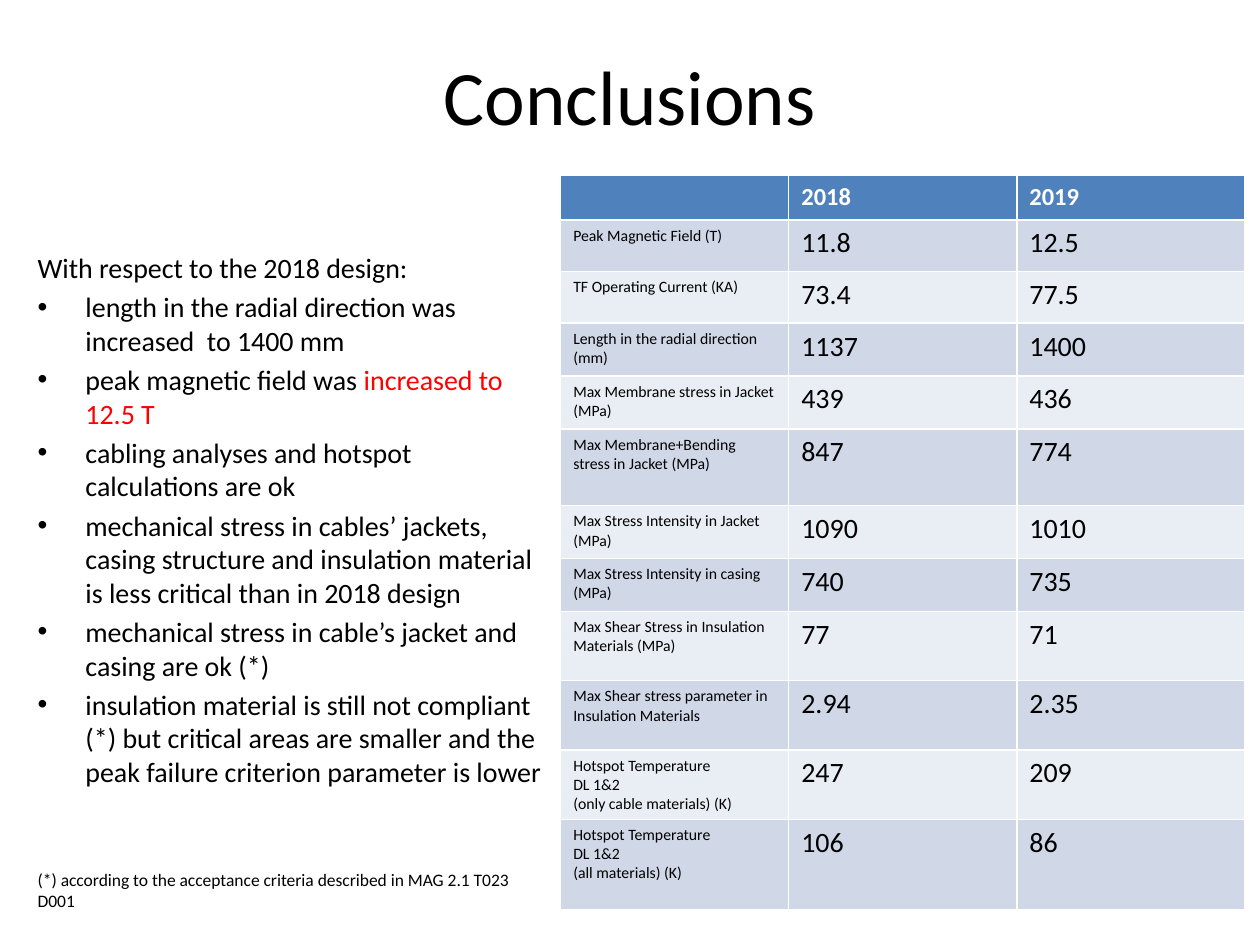
from lxml.etree import SubElement
from pptx import Presentation
from pptx.dml.color import RGBColor
from pptx.enum.text import MSO_ANCHOR, PP_ALIGN
from pptx.oxml.ns import qn
from pptx.util import Inches, Pt

WIDE, HIGH = Inches(10), Inches(7.5)
FONT = "Calibri"
HUES = {"ink": "000000", "alert": "FF0000", "head": "4F81BD",
        "odd": "D0D8E8", "even": "E9EDF4", "paper": "FFFFFF"}

INTRO = "With respect to the 2018 design:"
POINTS = [
    ("length in the radial direction was increased  to 1400 mm", ""),
    ("peak magnetic field was ", "increased to 12.5 T"),
    ("cabling analyses and hotspot calculations are ok", ""),
    ("mechanical stress in cables’ jackets, casing structure and insulation "
     "material is less critical than in 2018 design", ""),
    ("mechanical stress in cable’s jacket and casing are ok (*)", ""),
    ("insulation material is still not compliant (*) but critical areas are "
     "smaller and the peak failure criterion parameter is lower", ""),
]
NOTE = "(*) according to the acceptance criteria described in MAG 2.1 T023 D001"

ROWS = [
    (0.35, "", "2018", "2019"),
    (0.41, "Peak Magnetic Field (T)", "11.8", "12.5"),
    (0.41, "TF Operating Current (KA)", "73.4", "77.5"),
    (0.42, "Length in the radial direction (mm)", "1137", "1400"),
    (0.42, "Max Membrane stress in Jacket (MPa)", "439", "436"),
    (0.61, "Max Membrane+Bending\nstress in Jacket (MPa)", "847", "774"),
    (0.42, "Max Stress Intensity in Jacket (MPa)", "1090", "1010"),
    (0.42, "Max Stress Intensity in casing (MPa)", "740", "735"),
    (0.55, "Max Shear Stress in Insulation Materials (MPa)", "77", "71"),
    (0.55, "Max Shear stress parameter in Insulation Materials", "2.94", "2.35"),
    (0.55, "Hotspot Temperature\nDL 1&2\n(only cable materials) (K)", "247", "209"),
    (0.72, "Hotspot Temperature\nDL 1&2\n(all materials) (K)", "106", "86"),
]


def share(left, top, width, height):
    """Turn percentages of the slide into a box."""
    return (int(WIDE * left / 100), int(HIGH * top / 100),
            int(WIDE * width / 100), int(HIGH * height / 100))


def style(run, size, hue="ink", bold=False):
    """Format one run."""
    font = run.font
    font.name, font.size, font.bold = FONT, Pt(size), bold
    font.color.rgb = RGBColor.from_string(HUES[hue])


def add_title(slide, box):
    """Place the heading in its placeholder."""
    title = slide.shapes.title
    title.left, title.top, title.width, title.height = box
    frame = title.text_frame
    frame.text = "Conclusions"
    frame.vertical_anchor = MSO_ANCHOR.MIDDLE
    para = frame.paragraphs[0]
    para.alignment = PP_ALIGN.CENTER
    style(para.runs[0], 44)


def add_line(para, text, alert="", size=16, gap=3.2, bullet=False):
    """Fill a paragraph, with an optional bullet and red ending."""
    para.text = text
    para.space_before = Pt(gap)
    style(para.runs[0], size)
    if alert:
        run = para.add_run()
        run.text = alert
        style(run, size, "alert")
    if bullet:
        props = para._p.get_or_add_pPr()
        props.set("marL", str(Inches(0.38)))
        props.set("indent", str(-Inches(0.38)))
        SubElement(props, qn("a:buFont"), typeface="Arial")
        SubElement(props, qn("a:buChar"), char="•")


def add_points(slide, box):
    """Place the findings and their footnote."""
    frame = slide.shapes.add_textbox(*box).text_frame
    frame.word_wrap = True
    add_line(frame.paragraphs[0], INTRO, gap=0)
    for text, alert in POINTS:
        add_line(frame.add_paragraph(), text, alert, bullet=True)
    add_line(frame.add_paragraph(), NOTE, size=10, gap=46)


def fill_cell(cell, text, size, hue, back, bold):
    """Write and colour one table cell."""
    cell.text = text
    cell.fill.solid()
    cell.fill.fore_color.rgb = RGBColor.from_string(HUES[back])
    for para in cell.text_frame.paragraphs:
        for run in para.runs:
            style(run, size, hue, bold)
        if not para.runs:
            SubElement(para._p, qn("a:endParaRPr"), sz=str(size * 100))


def add_results(slide, box):
    """Place the table that compares both designs."""
    table = slide.shapes.add_table(len(ROWS), 3, *box).table
    for col in table.columns:
        col.width = box[2] // 3
    total = sum(row[0] for row in ROWS)
    for i, (tall, *texts) in enumerate(ROWS):
        table.rows[i].height = int(box[3] * tall / total)
        head = i == 0
        back = "head" if head else "odd" if i % 2 else "even"
        for j, text in enumerate(texts):
            size = 14 if head else 16 if j else 9
            hue = "paper" if head else "ink"
            fill_cell(table.cell(i, j), text, size, hue, back, head)


def main():
    """Build and save the slide."""
    deck = Presentation()
    deck.slide_width, deck.slide_height = WIDE, HIGH
    slide = deck.slides.add_slide(deck.slide_layouts[5])
    add_title(slide, share(5, 1.73, 90, 16.67))
    add_points(slide, share(2, 25.87, 42.5, 66))
    add_results(slide, share(44.5, 18.6, 54.3, 77.73))
    deck.save("out.pptx")


if __name__ == "__main__":
    main()
